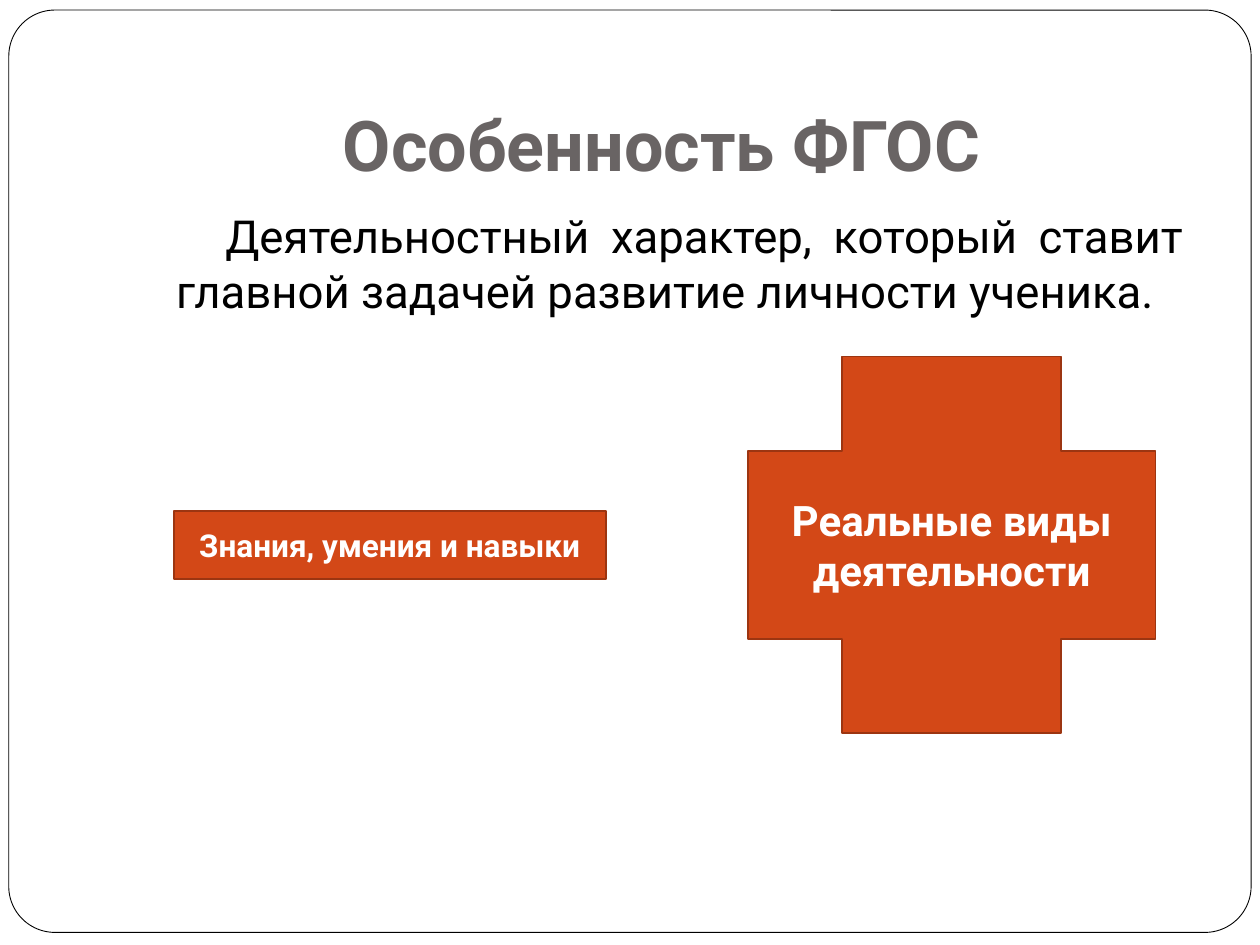
from pptx import Presentation
from pptx.dml.color import RGBColor
from pptx.enum.shapes import MSO_SHAPE
from pptx.enum.text import MSO_ANCHOR, PP_ALIGN
from pptx.util import Inches, Pt

ROUND, RECT, PLUS = MSO_SHAPE.ROUNDED_RECTANGLE, MSO_SHAPE.RECTANGLE, MSO_SHAPE.CROSS
TOP, MIDDLE, BOTTOM = MSO_ANCHOR.TOP, MSO_ANCHOR.MIDDLE, MSO_ANCHOR.BOTTOM
CENTER, JUSTIFY = PP_ALIGN.CENTER, PP_ALIGN.JUSTIFY
FONT = "Roboto"
COLORS = {
    "paper": "FFFFFF",
    "ink": "000000",
    "title": "696464",
    "fill": "D34817",
    "edge": "9C3511",
}
WIDE, HIGH = 10, 7.5


def color(name):
    return RGBColor.from_string(COLORS[name])


def part(box, left, top, width, height):
    x, y, w, h = box
    return x + left * w, y + top * h, width * w, height * h


def write(shape, text, size, tint, bold, align, anchor):
    frame = shape.text_frame
    frame.word_wrap = True
    frame.vertical_anchor = anchor
    para = frame.paragraphs[0]
    para.text = text
    para.alignment = align
    font = para.font
    font.name, font.size, font.bold = FONT, Pt(size), bold
    font.color.rgb = color(tint)
    return frame


def draw(slide, kind, box, fill, edge, weight):
    shape = slide.shapes.add_shape(kind, *map(Inches, box))
    shape.shadow.inherit = False
    shape.fill.solid()
    shape.fill.fore_color.rgb = color(fill)
    shape.line.color.rgb = color(edge)
    shape.line.width = Pt(weight)
    return shape


def add_frame(slide, box):
    shape = draw(slide, ROUND, box, "paper", "ink", 0.5)
    shape.adjustments[0] = 0.05


def add_title(slide, box):
    shape = slide.shapes.add_textbox(*map(Inches, box))
    frame = write(shape, "Особенность ФГОС", 40, "title", True, CENTER, BOTTOM)
    frame.margin_bottom = Inches(0.1)


def add_body(slide, box):
    shape = slide.shapes.add_textbox(*map(Inches, box))
    text = "Деятельностный характер, который ставит главной задачей развитие личности ученика."
    frame = write(shape, text, 26, "ink", False, JUSTIFY, TOP)
    frame.margin_top = Inches(0.08)
    props = frame.paragraphs[0]._p.get_or_add_pPr()
    props.set("marL", str(Inches(0.3)))
    props.set("indent", str(Inches(0.39)))


def add_signs(slide, box):
    signs = [
        (RECT, (0, 0.41, 0.44, 0.18), "Знания, умения и навыки", 18),
        (PLUS, (0.585, 0, 0.415, 1), "Реальные виды деятельности", 24),
    ]
    for kind, share, text, size in signs:
        shape = draw(slide, kind, part(box, *share), "fill", "edge", 1)
        write(shape, text, size, "paper", True, CENTER, MIDDLE)


def main():
    deck = Presentation()
    deck.slide_width, deck.slide_height = Inches(WIDE), Inches(HIGH)
    slide = deck.slides.add_slide(deck.slide_layouts[6])
    page = (0, 0, WIDE, HIGH)
    add_frame(slide, (0.07, 0.08, 9.86, 7.32))
    add_title(slide, part(page, 0.1, 0.04, 0.85, 0.17))
    add_body(slide, part(page, 0.1, 0.21, 0.85, 0.67))
    add_signs(slide, (1.38, 2.83, 7.79, 2.99))
    deck.save("out.pptx")


if __name__ == "__main__":
    main()
